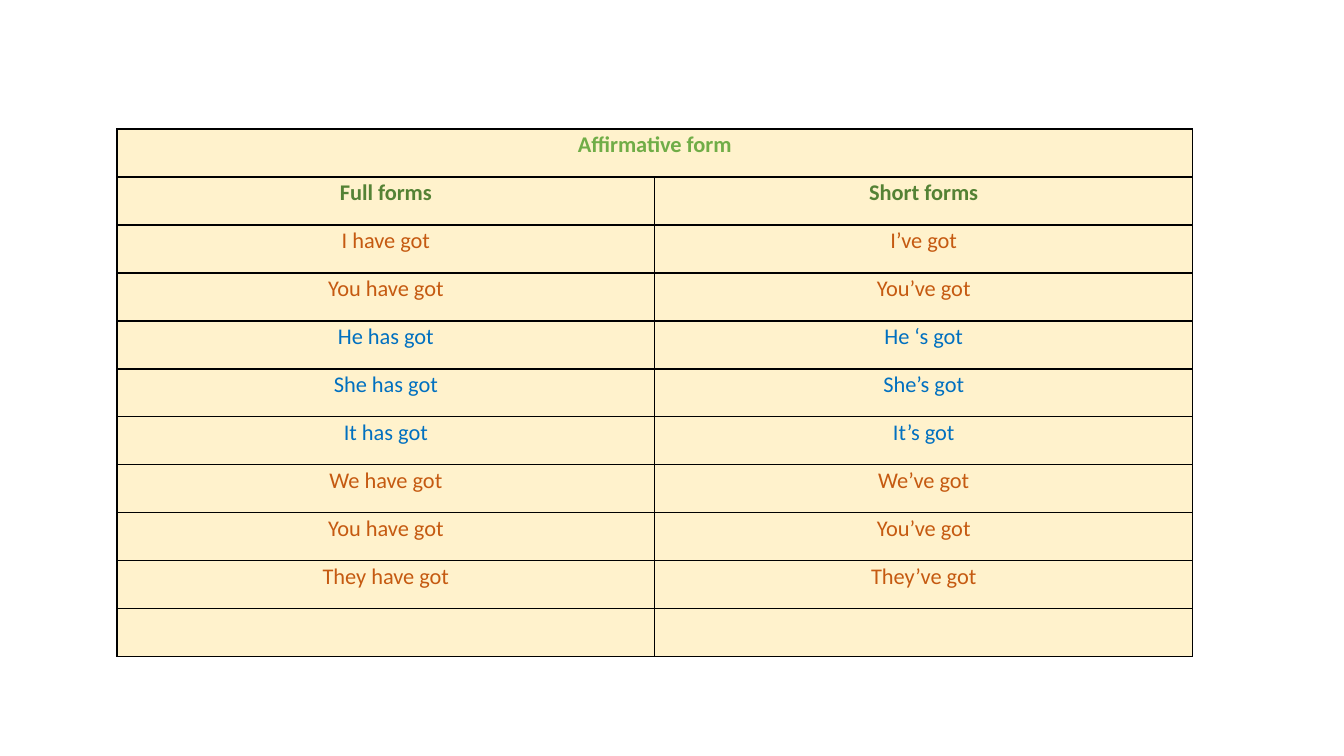
import pptx
import pptx.dml.color
import pptx.enum.text
import pptx.oxml
import pptx.oxml.ns
import pptx.util
from pptx.util import Inches

GREEN, DARK_GREEN, ORANGE, BLUE = "70AD47", "548235", "C55A11", "0070C0"
CREAM, BLACK = "FFF2CC", "000000"

ROWS = [
    ("Affirmative form", "", GREEN, True),
    ("Full forms", "Short forms", DARK_GREEN, True),
    ("I have got", "I’ve got", ORANGE, False),
    ("You have got", "You’ve got", ORANGE, False),
    ("He has got", "He ‘s got", BLUE, False),
    ("She has got", "She’s got", BLUE, False),
    ("It has got", "It’s got", BLUE, False),
    ("We have got", "We’ve got", ORANGE, False),
    ("You have got", "You’ve got", ORANGE, False),
    ("They have got", "They’ve got", ORANGE, False),
    ("", "", ORANGE, False),
]


def rgb(value):
    """Return the colour for a hex string."""
    return pptx.dml.color.RGBColor.from_string(value)


def set_format(obj, values):
    """Set every attribute named in a dict of format values."""
    for name, value in values.items():
        setattr(obj, name, value)


def style_cell(cell):
    """Give a cell its margins, black borders and cream fill."""
    set_format(cell, {
        "margin_left": Inches(0.07), "margin_right": Inches(0.07),
        "margin_top": 0, "margin_bottom": 0,
    })
    tcPr = cell._tc.get_or_add_tcPr()
    for side in ("lnL", "lnR", "lnT", "lnB"):
        tcPr.append(pptx.oxml.parse_xml(
            f'<a:{side} {pptx.oxml.ns.nsdecls("a")} w="{pptx.util.Pt(1)}">'
            f'<a:solidFill><a:srgbClr val="{BLACK}"/></a:solidFill></a:{side}>'
        ))
    cell.fill.solid()
    cell.fill.fore_color.rgb = rgb(CREAM)


def write_cell(cell, text, color, bold):
    """Write centred text in a cell."""
    p = cell.text_frame.paragraphs[0]
    set_format(p, {"alignment": pptx.enum.text.PP_ALIGN.CENTER, "line_spacing": 1.07})
    r = p.add_run()
    r.text = text
    set_format(r.font, {"name": "Calibri", "size": pptx.util.Pt(16), "bold": bold})
    r.font.color.rgb = rgb(color)


def add_forms_table(s, left, top, width, height):
    """Place the table of full and short forms in the given box."""
    table = s.shapes.add_table(len(ROWS), 2, left, top, width, height).table
    set_format(table, {"first_row": False, "horz_banding": False})
    for column in table.columns:
        column.width = width // 2
    for i, (full, short, color, bold) in enumerate(ROWS):
        table.rows[i].height = height // len(ROWS)
        for j, text in enumerate((full, short)):
            cell = table.cell(i, j)
            style_cell(cell)
            if text:
                write_cell(cell, text, color, bold)
    table.cell(0, 0).merge(table.cell(0, 1))


def main():
    """Build the slide and save it."""
    prs = pptx.Presentation()
    set_format(prs, {"slide_width": Inches(13.33), "slide_height": Inches(7.5)})
    s = prs.slides.add_slide(prs.slide_layouts[6])
    add_forms_table(s, Inches(1.16), Inches(1.28), Inches(10.67), Inches(5.24))
    prs.save("out.pptx")


if __name__ == "__main__":
    main()
